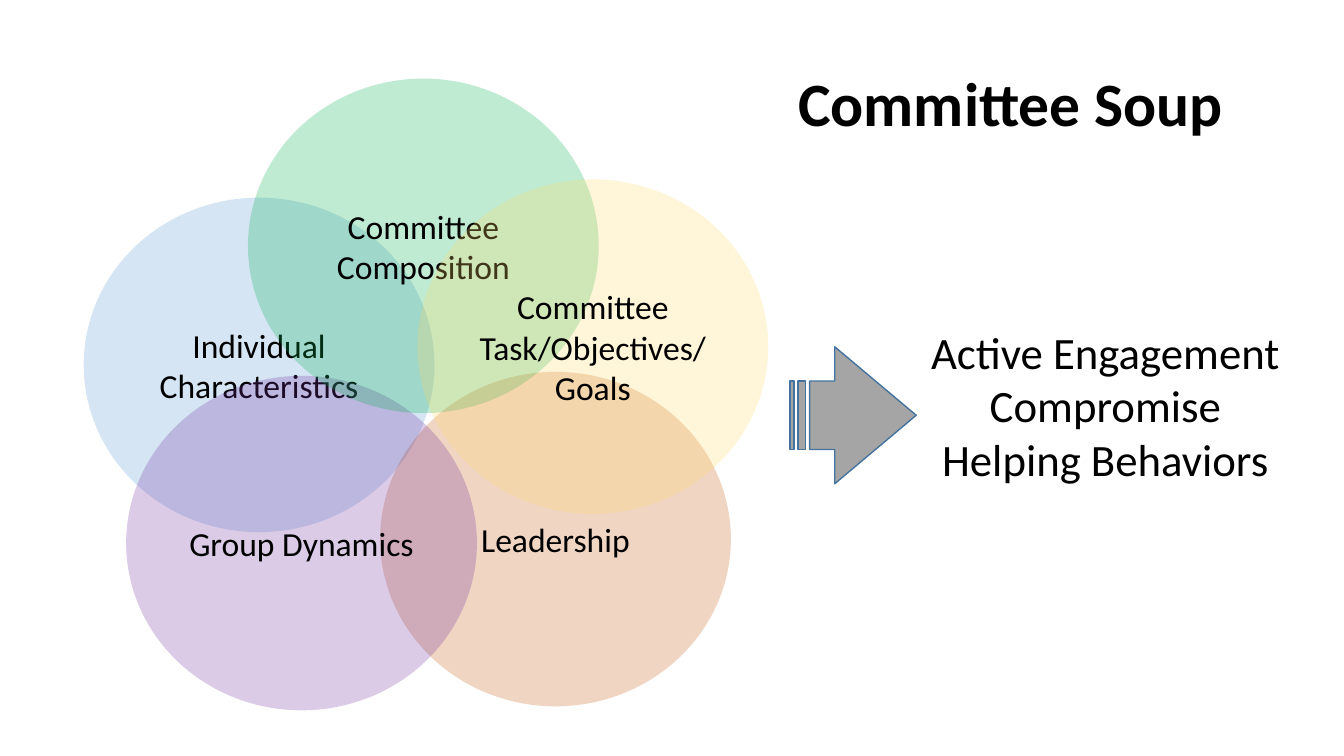
from lxml import etree
from pptx import Presentation
from pptx.dml.color import RGBColor
from pptx.enum.shapes import MSO_SHAPE as Kind
from pptx.enum.text import MSO_ANCHOR as Anchor, MSO_AUTO_SIZE as Fit, PP_ALIGN as Align
from pptx.oxml.ns import qn
from pptx.util import Cm, Pt

BLACK = RGBColor(0x00, 0x00, 0x00)
BLUE = RGBColor(0x5B, 0x9B, 0xD5)
ORANGE = RGBColor(0xC5, 0x5A, 0x11)
PURPLE = RGBColor(0x70, 0x30, 0xA0)
GREEN = RGBColor(0x00, 0xB0, 0x50)
YELLOW = RGBColor(0xFF, 0xD9, 0x66)
GREY = RGBColor(0xA5, 0xA5, 0xA5)
EDGE = RGBColor(0x43, 0x73, 0x9E)


def write(frame, lines, size, align=Align.CENTER, bold=False):
    """Fill the frame with one paragraph per line."""
    for i, line in enumerate(lines):
        para = frame.paragraphs[0] if i == 0 else frame.add_paragraph()
        para.alignment = align
        run = para.add_run()
        run.text = line
        font = run.font
        font.name = "Calibri"
        font.size = Pt(size)
        font.bold = bold
        font.color.rgb = BLACK


deck = Presentation()
deck.slide_width, deck.slide_height = Cm(33.87), Cm(19.05)
slide = deck.slides.add_slide(deck.slide_layouts[5])
shapes = slide.shapes

# Title
title = shapes.title
title.left, title.top, title.width, title.height = Cm(15.7), Cm(0.84), Cm(15.39), Cm(3.68)
frame = title.text_frame
frame.auto_size = Fit.NONE
frame.vertical_anchor = Anchor.MIDDLE
write(frame, ["Committee Soup"], 44, Align.RIGHT, True)
frame.paragraphs[0].line_spacing = 0.9

# Overlapping circles, from back to front
rings = [
    (2.11, 4.98, BLUE, ["Individual", "Characteristics"]),
    (9.58, 9.37, ORANGE, ["Leadership"]),
    (3.18, 9.47, PURPLE, ["Group Dynamics"]),
    (6.25, 1.98, GREEN, ["Committee Composition"]),
    (10.52, 4.52, YELLOW, ["Committee Task/Objectives/Goals"]),
]
for left, top, color, lines in rings:
    ring = shapes.add_shape(Kind.OVAL, Cm(left), Cm(top), Cm(8.84), Cm(8.43))
    ring.shadow.inherit = False
    ring.fill.solid()
    ring.fill.fore_color.rgb = color
    tint = ring.fill._xPr.find(qn("a:solidFill"))[0]
    etree.SubElement(tint, qn("a:alpha"), val="25000")
    ring.line.fill.background()
    ring.text_frame.word_wrap = True
    ring.text_frame.vertical_anchor = Anchor.MIDDLE
    write(ring.text_frame, lines, 24)

# Arrow to the outcomes
arrow = shapes.add_shape(Kind.STRIPED_RIGHT_ARROW, Cm(19.91), Cm(8.74), Cm(3.18), Cm(3.45))
arrow.adjustments[0] = 0.5
arrow.adjustments[1] = 0.645
arrow.shadow.inherit = False
arrow.fill.solid()
arrow.fill.fore_color.rgb = GREY
arrow.line.color.rgb = EDGE
arrow.line.width = Pt(1)

# Outcomes
goals = shapes.add_textbox(Cm(23.16), Cm(8.05), Cm(9.4), Cm(4.37))
goals.text_frame.word_wrap = False
goals.text_frame.auto_size = Fit.SHAPE_TO_FIT_TEXT
write(goals.text_frame, ["Active Engagement", "Compromise", "Helping Behaviors"], 32)

deck.save("out.pptx")
